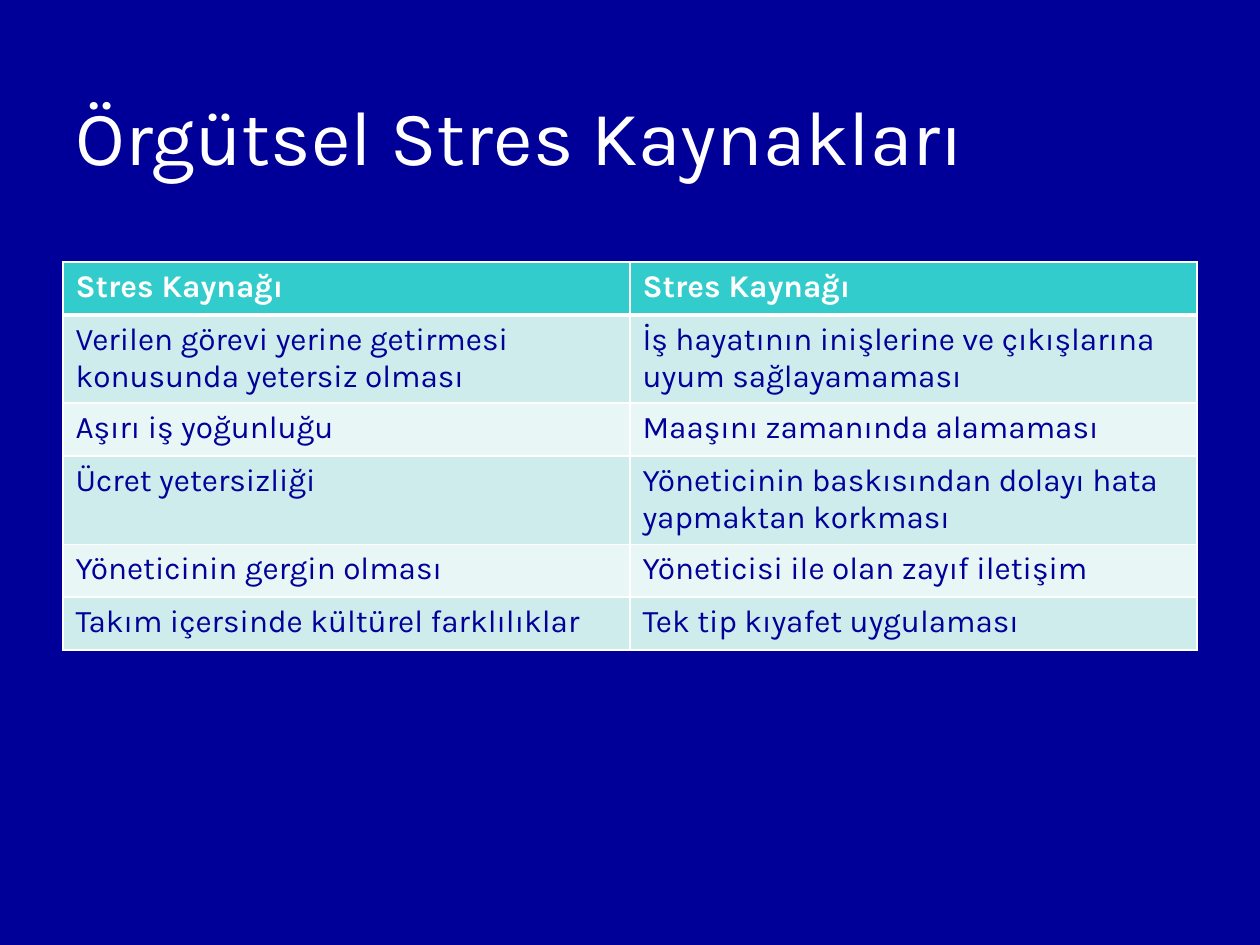
from dataclasses import dataclass

from lxml import etree
from pptx import Presentation
from pptx import util as u
from pptx.dml.color import RGBColor
from pptx.enum import text
from pptx.oxml import ns


@dataclass(frozen=True)
class Theme:
    font: str = "Karla"
    background: str = "000099"
    light: str = "FFFFFF"
    body: str = "010199"
    header_fill: str = "33CCCC"
    bands: tuple = ("CEECEC", "E8F6F6")
    title_size: int = 44
    table_size: int = 18
    rule: int = 1
    header_rule: int = 3


THEME = Theme()
WIDTH, HEIGHT = u.Inches(10), u.Inches(7.5)
MARGIN = int(WIDTH * 0.05)
CONTENT_WIDTH = WIDTH - 2 * MARGIN

STRESS_SOURCES = [
    ("Stres Kaynağı", "Stres Kaynağı"),
    ("Verilen görevi yerine getirmesi konusunda yetersiz olması",
     "İş hayatının inişlerine ve çıkışlarına uyum sağlayamaması"),
    ("Aşırı iş yoğunluğu", "Maaşını zamanında alamaması"),
    ("Ücret yetersizliği",
     "Yöneticinin baskısından dolayı hata yapmaktan korkması"),
    ("Yöneticinin gergin olması", "Yöneticisi ile olan zayıf iletişim"),
    ("Takım içersinde kültürel farklılıklar", "Tek tip kıyafet uygulaması"),
]


def paint(fill, color):
    fill.solid()
    fill.fore_color.rgb = RGBColor.from_string(color)


def write(frame, words, size, color, bold=False):
    frame.text = words
    for run in frame.paragraphs[0].runs:
        run.font.name = THEME.font
        run.font.size = u.Pt(size)
        run.font.bold = bold
        run.font.color.rgb = RGBColor.from_string(color)


def add_borders(cell, top, bottom):
    """Rule all four sides; must run before the cell is filled."""
    properties = cell._tc.get_or_add_tcPr()
    widths = {"L": THEME.rule, "R": THEME.rule, "T": top, "B": bottom}
    for side, points in widths.items():
        line = etree.SubElement(properties, ns.qn(f"a:ln{side}"),
                                w=str(u.Pt(points)))
        solid = etree.SubElement(line, ns.qn("a:solidFill"))
        etree.SubElement(solid, ns.qn("a:srgbClr"), val=THEME.light)


def add_title(slide, words):
    title = slide.shapes.add_textbox(MARGIN, int(HEIGHT * 0.043),
                                     CONTENT_WIDTH, int(HEIGHT * 0.2))
    frame = title.text_frame
    frame.word_wrap = True
    frame.vertical_anchor = text.MSO_ANCHOR.MIDDLE
    write(frame, words, THEME.title_size, THEME.light)


def add_source_table(slide, rows):
    row_height = u.Inches(0.42)
    table = slide.shapes.add_table(
        len(rows), len(rows[0]), MARGIN, u.Inches(2.08),
        CONTENT_WIDTH, row_height * len(rows)).table
    for index, row in enumerate(rows):
        header = index == 0
        table.rows[index].height = row_height
        fill = THEME.header_fill if header else THEME.bands[(index - 1) % 2]
        color = THEME.light if header else THEME.body
        top = THEME.header_rule if index == 1 else THEME.rule
        bottom = THEME.header_rule if header else THEME.rule
        for column, words in enumerate(row):
            cell = table.cell(index, column)
            add_borders(cell, top, bottom)
            paint(cell.fill, fill)
            write(cell.text_frame, words, THEME.table_size, color, header)


def main():
    deck = Presentation()
    deck.slide_width, deck.slide_height = WIDTH, HEIGHT
    slide = deck.slides.add_slide(deck.slide_layouts[6])
    paint(slide.background.fill, THEME.background)
    add_title(slide, "Örgütsel Stres Kaynakları")
    add_source_table(slide, STRESS_SOURCES)
    deck.save("out.pptx")


if __name__ == "__main__":
    main()
